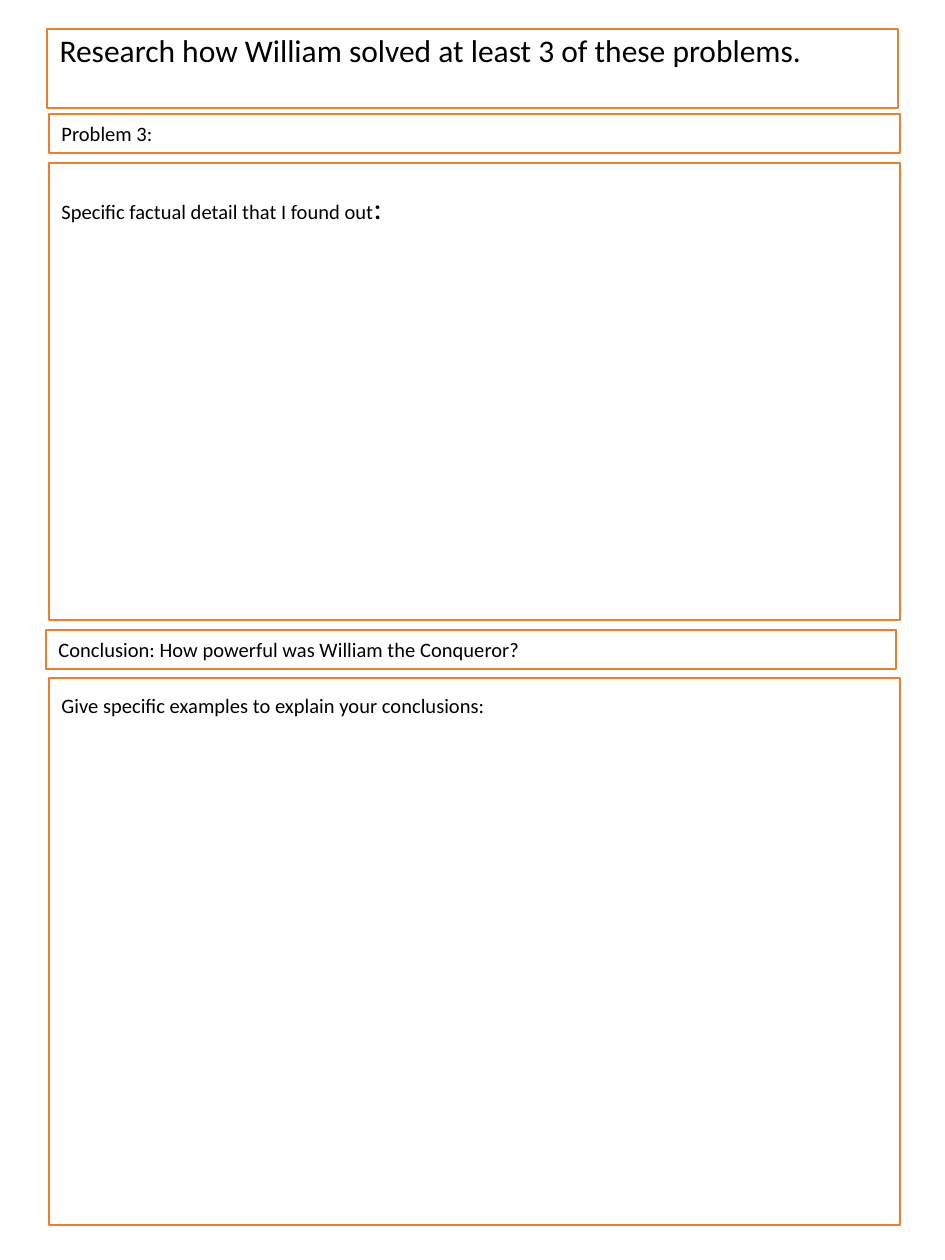
from dataclasses import dataclass

from pptx import Presentation
from pptx.dml.color import RGBColor
from pptx.enum.shapes import MSO_SHAPE
from pptx.enum.text import MSO_ANCHOR, MSO_AUTO_SIZE, PP_ALIGN
from pptx.shapes.autoshape import Shape
from pptx.util import Emu, Inches, Pt

PX_PER_INCH = 126


@dataclass(frozen=True)
class Theme:
    font: str = "Calibri"
    ink: RGBColor = RGBColor(0x00, 0x00, 0x00)
    paper: RGBColor = RGBColor(0xFF, 0xFF, 0xFF)
    border: RGBColor = RGBColor(0xED, 0x7D, 0x31)
    border_width: float = 1
    title_size: float = 18
    body_size: float = 11.7
    colon_size: float = 17.6


@dataclass(frozen=True)
class Span:
    text: str
    size: float


@dataclass(frozen=True)
class Panel:
    left: int
    top: int
    height: int
    spans: tuple[Span, ...]
    anchor: MSO_ANCHOR = MSO_ANCHOR.TOP
    inset_top: int = 6
    width: int = 851


THEME = Theme()

# Worksheet content, lengths in px
TITLE = Panel(47, 29, 79, (
    Span("Research how William solved at least 3 of these problems.", THEME.title_size),))
PANELS = (
    Panel(49, 114, 39, (Span("Problem 3:", THEME.body_size),), MSO_ANCHOR.MIDDLE),
    Panel(49, 163, 457,
          (Span("Specific factual detail that I found out", THEME.body_size),
           Span(":", THEME.colon_size)), inset_top=26),
    Panel(46, 630, 39,
          (Span("Conclusion: How powerful was William the Conqueror?", THEME.body_size),),
          MSO_ANCHOR.MIDDLE, width=850),
    Panel(49, 678, 547,
          (Span("Give specific examples to explain your conclusions:", THEME.body_size),),
          inset_top=15),
)


def px(length: int) -> Emu:
    return Emu(round(length * Inches(1) / PX_PER_INCH))


def format_panel(box: Shape, panel: Panel, line_spacing: float = 1.0) -> None:
    """Place a bordered box and write its text run by run."""
    box.left, box.top = px(panel.left), px(panel.top)
    box.width, box.height = px(panel.width), px(panel.height)
    box.fill.solid()
    box.fill.fore_color.rgb = THEME.paper
    box.line.color.rgb = THEME.border
    box.line.width = Pt(THEME.border_width)

    frame = box.text_frame
    frame.word_wrap = True
    frame.auto_size = MSO_AUTO_SIZE.NONE
    frame.vertical_anchor = panel.anchor
    frame.margin_left = frame.margin_right = Inches(0.1)
    frame.margin_top, frame.margin_bottom = px(panel.inset_top), px(6)
    para = frame.paragraphs[0]
    para.alignment = PP_ALIGN.LEFT
    para.line_spacing = line_spacing
    for span in panel.spans:
        run = para.add_run()
        run.text = span.text
        run.font.name = THEME.font
        run.font.size = Pt(span.size)
        run.font.color.rgb = THEME.ink


def main() -> None:
    deck = Presentation()
    deck.slide_width, deck.slide_height = Inches(7.5), Inches(10)
    page = deck.slides.add_slide(deck.slide_layouts.get_by_name("Title Only"))

    # Title
    format_panel(page.shapes.title, TITLE, line_spacing=0.9)

    # Headings and answer boxes
    for panel in PANELS:
        box = page.shapes.add_shape(MSO_SHAPE.RECTANGLE, px(panel.left), px(panel.top),
                                    px(panel.width), px(panel.height))
        box.shadow.inherit = False
        format_panel(box, panel)

    deck.save("out.pptx")


if __name__ == "__main__":
    main()
